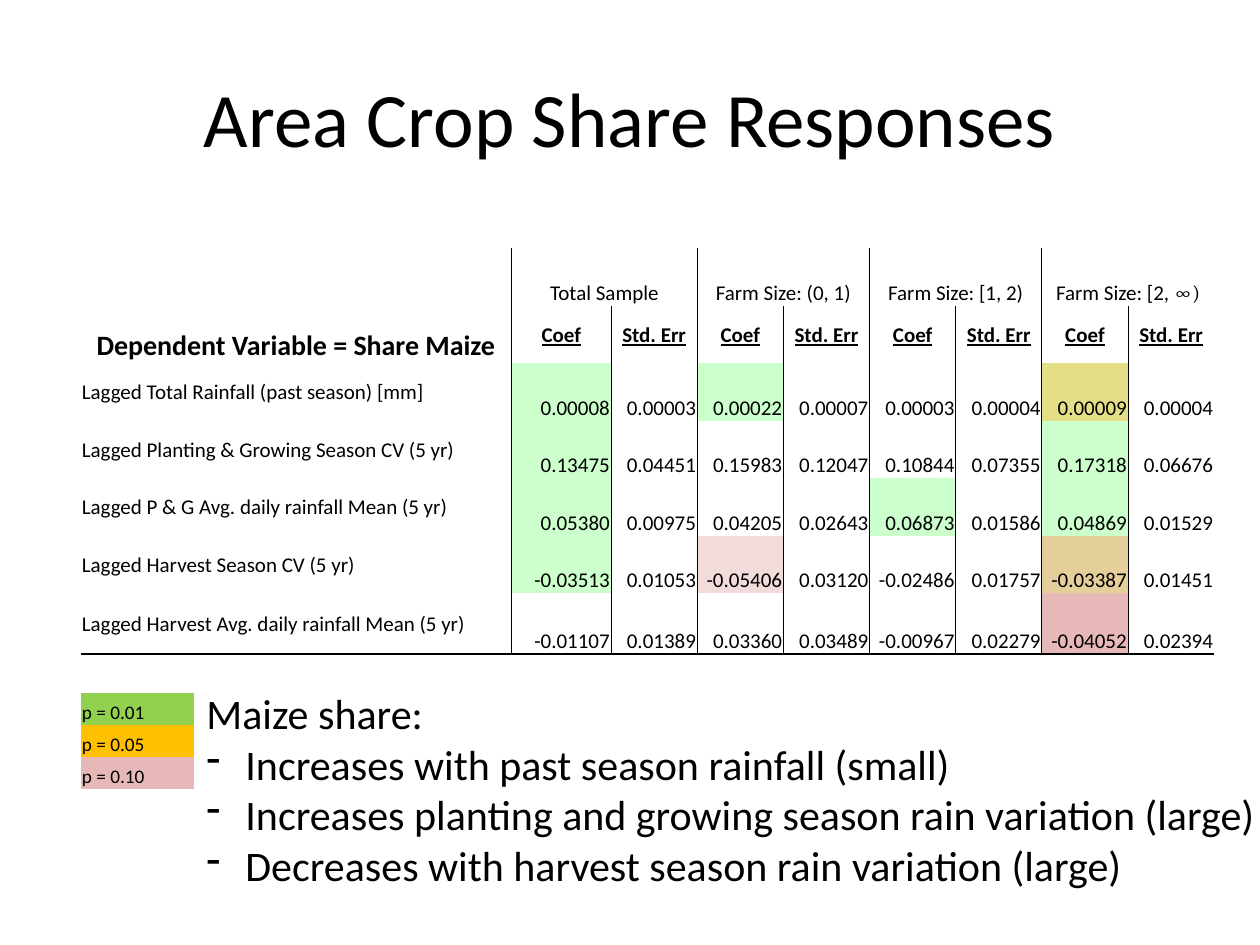
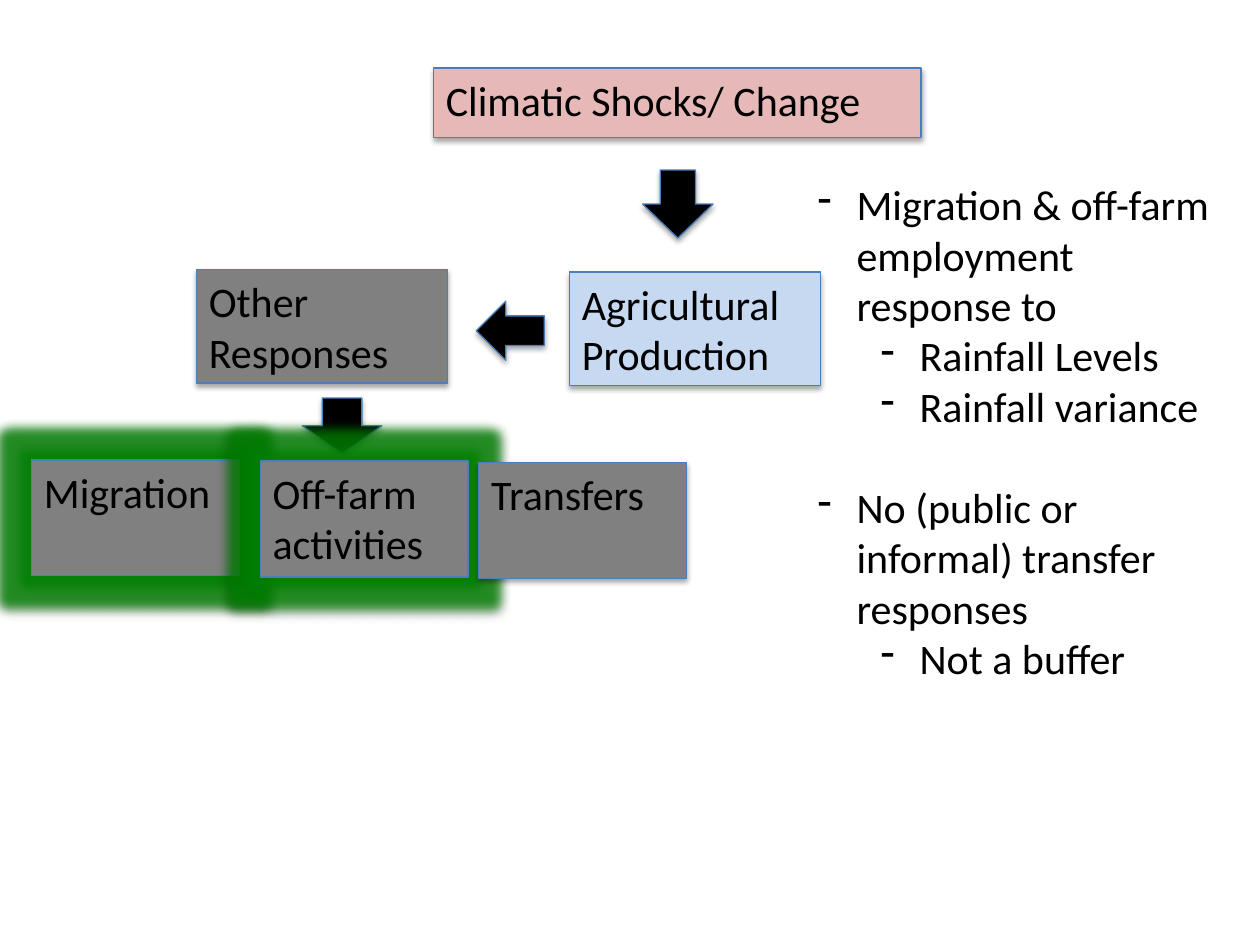
from lxml.etree import SubElement
from pptx import Presentation
from pptx.dml.color import RGBColor
from pptx.enum.shapes import MSO_SHAPE
from pptx.enum.text import MSO_ANCHOR, MSO_AUTO_SIZE, PP_ALIGN
from pptx.oxml.ns import qn
from pptx.util import Inches, Pt

BLACK = RGBColor(0x00, 0x00, 0x00)
GRAY = RGBColor(0x80, 0x80, 0x80)
LINE_BLUE = RGBColor(0x4B, 0x7E, 0xBC)
LIGHT_BLUE = RGBColor(0xC6, 0xD9, 0xF1)
PINK = RGBColor(0xE6, 0xB9, 0xB8)
ROSE = RGBColor(0xE6, 0xB8, 0xB7)
PALE_ROSE = RGBColor(0xF2, 0xDC, 0xDB)
PALE_GREEN = RGBColor(0xCC, 0xFF, 0xCC)
KHAKI = RGBColor(0xE4, 0xDF, 0x87)
SAND = RGBColor(0xE4, 0xCE, 0x99)
LIME = RGBColor(0x92, 0xD0, 0x50)
AMBER = RGBColor(0xFF, 0xC0, 0x00)
GLOW_GREEN = RGBColor(0x00, 0x80, 0x00)

GRID_COLUMNS = 100
GRID_ROWS = 75
PLAIN_TABLE_STYLE = "{2D5ABB26-0587-4C30-8999-92F81FD0307C}"

SAMPLES = ["Total Sample", "Farm Size: (0, 1)", "Farm Size: [1, 2)", "Farm Size: [2, "]
ESTIMATES = [
    ("Lagged Total Rainfall (past season) [mm]",
     "0.00008 0.00003 0.00022 0.00007 0.00003 0.00004 0.00009 0.00004",
     {1: PALE_GREEN, 3: PALE_GREEN, 7: KHAKI}),
    ("Lagged Planting & Growing Season CV (5 yr)",
     "0.13475 0.04451 0.15983 0.12047 0.10844 0.07355 0.17318 0.06676",
     {1: PALE_GREEN, 7: PALE_GREEN}),
    ("Lagged P & G Avg. daily rainfall Mean (5 yr)",
     "0.05380 0.00975 0.04205 0.02643 0.06873 0.01586 0.04869 0.01529",
     {1: PALE_GREEN, 5: PALE_GREEN, 7: PALE_GREEN}),
    ("Lagged Harvest Season CV (5 yr)",
     "-0.03513 0.01053 -0.05406 0.03120 -0.02486 0.01757 -0.03387 0.01451",
     {1: PALE_GREEN, 3: PALE_ROSE, 7: SAND}),
    ("Lagged Harvest Avg. daily rainfall Mean (5 yr)",
     "-0.01107 0.01389 0.03360 0.03489 -0.00967 0.02279 -0.04052 0.02394",
     {7: ROSE}),
]
LEGEND = [("p = 0.01", LIME), ("p = 0.05", AMBER), ("p = 0.10", ROSE)]
MAIZE_POINTS = [
    ("Maize share:", None, 0),
    ("Increases with past season rainfall (small)", 0, 0),
    ("Increases planting and growing season rain variation (large)", 0, 0),
    ("Decreases with harvest season rain variation (large)", 0, 0),
]
RESPONSE_POINTS = [
    ("Migration & off-farm employment response to", 0, 0),
    ("Rainfall Levels", 1, 0),
    ("Rainfall variance", 1, 0),
    ("No (public or informal) transfer responses", 0, 29),
    ("Not a buffer", 1, 0),
]


class SlideBuilder:
    font_name = "Calibri"
    body_size = 24
    title_size = 44

    def __init__(self, presentation):
        self.presentation = presentation
        self.column = presentation.slide_width / GRID_COLUMNS
        self.row = presentation.slide_height / GRID_ROWS
        self.slide = None

    def new_slide(self):
        self.slide = self.presentation.slides.add_slide(self.presentation.slide_layouts[6])

    def place(self, left, top, width, height):
        return (round(left * self.column), round(top * self.row),
                round(width * self.column), round(height * self.row))

    def format_runs(self, paragraph, size, bold=False, underline=False):
        for run in paragraph.runs:
            font = run.font
            font.name, font.size = self.font_name, Pt(size)
            font.bold, font.underline = bold, underline
            font.color.rgb = BLACK

    def title(self, text):
        box = self.slide.shapes.add_textbox(*self.place(5, 3, 90, 12.5))
        frame = box.text_frame
        frame.word_wrap = True
        frame.vertical_anchor = MSO_ANCHOR.MIDDLE
        frame.text = text
        frame.paragraphs[0].alignment = PP_ALIGN.CENTER
        self.format_runs(frame.paragraphs[0], self.title_size)

    def bullets(self, area, points, wrap=True):
        frame = self.slide.shapes.add_textbox(*self.place(*area)).text_frame
        frame.word_wrap = wrap
        frame.auto_size = MSO_AUTO_SIZE.SHAPE_TO_FIT_TEXT
        for index, (text, level, space_before) in enumerate(points):
            paragraph = frame.add_paragraph() if index else frame.paragraphs[0]
            paragraph.text = text
            if space_before:
                paragraph.space_before = Pt(space_before)
            if level is not None:
                paragraph.level = level
                properties = paragraph._p.get_or_add_pPr()
                properties.set("marL", str(Inches(0.31 + 0.5 * level)))
                properties.set("indent", str(-Inches(0.31)))
                SubElement(properties, qn("a:buFontTx"))
                SubElement(properties, qn("a:buChar"), char="-")
            self.format_runs(paragraph, self.body_size)

    def effect_color(self, effect, color, alpha):
        element = SubElement(effect, qn("a:srgbClr"), val=str(color))
        SubElement(element, qn("a:alpha"), val=str(alpha * 1000))

    def shape(self, kind, area, fill, text="", glow=False):
        shape = self.slide.shapes.add_shape(kind, *self.place(*area))
        shape.fill.solid()
        shape.fill.fore_color.rgb = fill
        shape.line.color.rgb = LINE_BLUE
        shape.line.width = Pt(0.75)
        shape.shadow.inherit = False
        effects = shape._element.spPr.find(qn("a:effectLst"))
        if glow:
            halo = SubElement(effects, qn("a:glow"), rad=str(Pt(12)))
            self.effect_color(halo, GLOW_GREEN, 80)
        shadow = SubElement(effects, qn("a:outerShdw"), blurRad=str(Pt(3.1)),
                            dist=str(Pt(1.8)), dir="5400000", rotWithShape="0")
        self.effect_color(shadow, BLACK, 35)
        if text:
            frame = shape.text_frame
            frame.word_wrap = True
            frame.vertical_anchor = MSO_ANCHOR.TOP
            frame.text = text
            frame.paragraphs[0].alignment = PP_ALIGN.LEFT
            self.format_runs(frame.paragraphs[0], self.body_size)

    def table(self, area, widths, heights):
        frame = self.slide.shapes.add_table(len(heights), len(widths), *self.place(*area))
        table = frame.table
        table.first_row = table.horz_banding = False
        table._tbl.tblPr.find(qn("a:tableStyleId")).text = PLAIN_TABLE_STYLE
        for column, width in zip(table.columns, widths):
            column.width = round(width * self.column)
        for row, height in zip(table.rows, heights):
            row.height = round(height * self.row)
        return table

    def border(self, cell, side, width):
        line = SubElement(cell._tc.get_or_add_tcPr(), qn("a:ln" + side), w=str(Pt(width)))
        fill = SubElement(line, qn("a:solidFill"))
        SubElement(fill, qn("a:srgbClr"), val=str(BLACK))

    def cell(self, cell, text, alignment=PP_ALIGN.LEFT, anchor=MSO_ANCHOR.BOTTOM,
             fill=None, size=12, bold=False, underline=False):
        cell.margin_left = cell.margin_right = cell.margin_top = Inches(0.01)
        cell.margin_bottom = 0
        cell.vertical_anchor = anchor
        cell.text_frame.text = text
        paragraph = cell.text_frame.paragraphs[0]
        paragraph.alignment = alignment
        self.format_runs(paragraph, size, bold, underline)
        if fill is None:
            cell.fill.background()
        else:
            cell.fill.solid()
            cell.fill.fore_color.rgb = fill


def build_crop_shares(builder):
    builder.new_slide()
    builder.title("Area Crop Share Responses")

    widths = [34.2, 7.9] + [6.84] * 7
    heights = [4.57] * 6 + [4.8]
    table = builder.table((6.4, 19.7, 90, 32.2), widths, heights)
    last_row, last_column = len(heights) - 1, len(widths) - 1
    for row in range(len(heights)):
        for column in range(len(widths)):
            cell = table.cell(row, column)
            if column % 2:
                builder.border(cell, "L", 0.5)
            elif column < last_column:
                builder.border(cell, "R", 0.5)
            if row == last_row:
                builder.border(cell, "B", 1)

    table.cell(0, 0).merge(table.cell(1, 0))
    builder.cell(table.cell(0, 0), "Dependent Variable = Share Maize",
                 PP_ALIGN.CENTER, size=16, bold=True)
    for index, sample in enumerate(SAMPLES):
        column = 1 + 2 * index
        header = table.cell(0, column)
        header.merge(table.cell(0, column + 1))
        builder.cell(header, sample, PP_ALIGN.CENTER)
        for offset, label in enumerate(("Coef", "Std. Err")):
            builder.cell(table.cell(1, column + offset), label, PP_ALIGN.CENTER,
                         MSO_ANCHOR.MIDDLE, bold=True, underline=True)
    infinity = header.text_frame.paragraphs[0].add_run()
    infinity.text = "∞)"
    infinity.font.name, infinity.font.size = "Cambria", Pt(12)
    infinity.font.color.rgb = BLACK

    for row, (label, values, fills) in enumerate(ESTIMATES, start=2):
        builder.cell(table.cell(row, 0), label, anchor=MSO_ANCHOR.MIDDLE)
        for column, value in enumerate(values.split(), start=1):
            builder.cell(table.cell(row, column), value, PP_ALIGN.RIGHT, fill=fills.get(column))

    legend = builder.table((6.4, 55, 9, 7.6), [9], [2.53] * len(LEGEND))
    for row, (label, color) in enumerate(LEGEND):
        builder.cell(legend.cell(row, 0), label, fill=color, size=11)
    builder.bullets((15.4, 54.1, 86.3, 17.2), MAIZE_POINTS, wrap=False)


def build_response_flow(builder):
    builder.new_slide()
    box = MSO_SHAPE.RECTANGLE
    builder.shape(box, (45.2, 21.6, 19.9, 9), LIGHT_BLUE, "Agricultural Production")
    builder.shape(box, (34.4, 5.4, 38.7, 5.5), PINK, "Climatic Shocks/ Change")
    builder.shape(MSO_SHAPE.DOWN_ARROW, (51, 13.5, 5.6, 5.4), BLACK)
    builder.shape(box, (15.6, 21.4, 19.9, 9), GRAY, "Other Responses")
    builder.shape(MSO_SHAPE.DOWN_ARROW, (24, 31.6, 6.3, 4.4), BLACK)
    responses = [("Migration", True), ("Off-farm activities", True), ("Transfers", False)]
    for index, (text, glow) in enumerate(responses):
        area = (2.5 + 17.75 * index + (0.4 if index == 1 else 0), 36.5 + 0.1 * index, 16.5, 9.2)
        builder.shape(box, area, GRAY, text, glow)
    builder.shape(MSO_SHAPE.LEFT_ARROW, (37.8, 23.9, 5.4, 4.7), BLACK)
    builder.bullets((63.9, 13.7, 34.5, 41.4), RESPONSE_POINTS)


def main():
    presentation = Presentation()
    presentation.slide_width = Inches(10)
    presentation.slide_height = Inches(7.5)
    builder = SlideBuilder(presentation)
    build_crop_shares(builder)
    build_response_flow(builder)
    presentation.save("out.pptx")


if __name__ == "__main__":
    main()
